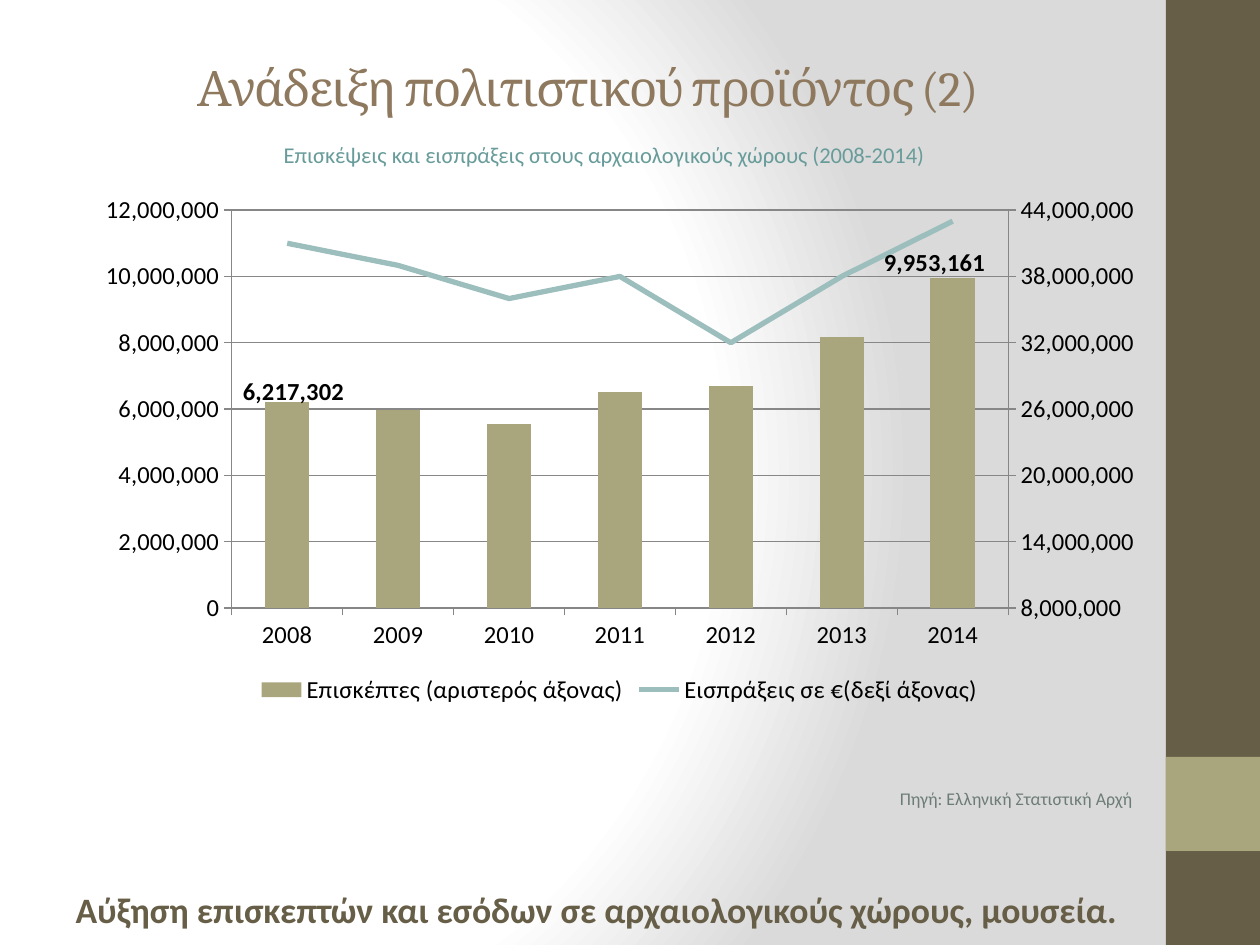
import copy
import pptx
import pptx.util
import pptx.chart.axis
import pptx.chart.data
import pptx.dml.color
import pptx.enum.chart
import pptx.enum.shapes
import pptx.enum.text
import pptx.oxml
import pptx.oxml.ns

PX = 914400 / 126
qn = pptx.oxml.ns.qn
ALIGN = pptx.enum.text.PP_ALIGN


class Theme:
    dark, olive, teal = "675E47", "A9A57C", "9CBEBD"
    title, lead, note = "8E795E", "689C9A", "6D7D76"
    black, grid, white, edge = "000000", "868686", "FFFFFF", "DADADA"
    serif, sans = "Cambria", "Calibri"
    title_pt, lead_pt, note_pt, main_pt, chart_pt = 28, 12.9, 10.2, 20.4, 14


def px(*nums):
    return [round(n * PX) for n in nums]


def rgb(code):
    return pptx.dml.color.RGBColor.from_string(code)


def style(font, face, size, color, bold=False):
    font.name, font.size, font.bold = face, pptx.util.Pt(size), bold
    font.color.rgb = rgb(color)


def place(shape, box):
    shape.left, shape.top, shape.width, shape.height = px(*box)


def add_xml(tag, parent, **attrs):
    node = parent.makeelement(qn(tag), {k: str(v) for k, v in attrs.items()})
    parent.append(node)
    return node


def layout(shares, inner=False):
    """Manual chart layout from shares of the chart's size."""
    node = pptx.oxml.parse_xml(
        '<c:layout xmlns:c="http://schemas.openxmlformats.org/drawingml/2006/chart"/>')
    man = add_xml("c:manualLayout", node)
    if inner:
        add_xml("c:layoutTarget", man, val="inner")
        for key in ("xMode", "yMode"):
            add_xml("c:" + key, man, val="edge")
    for key, share in zip("xywh", shares):
        add_xml("c:" + key, man, val=round(share, 3))
    return node


def backdrop(slide):
    # Round gradient, white at the left
    fill = slide.background.fill
    fill.gradient()
    grad = slide.background._cSld.find(".//" + qn("a:gradFill"))
    for child in list(grad):
        grad.remove(child)
    stops = add_xml("a:gsLst", grad)
    for pos, color in ((0, Theme.white), (75, Theme.white), (100, Theme.edge)):
        add_xml("a:srgbClr", add_xml("a:gs", stops, pos=pos * 1000), val=color)
    way = add_xml("a:path", grad, path="circle")
    add_xml("a:fillToRect", way, l=20000, t=50000, r=100000, b=50000)


def sidebar(slide, box):
    # Dark band with a lighter square
    x, y, w, h = box
    square = (x, y + h - 2 * w, w, w)
    for part, color in ((box, Theme.dark), (square, Theme.olive)):
        rect = slide.shapes.add_shape(
            pptx.enum.shapes.MSO_SHAPE.RECTANGLE, *px(*part))
        rect.shadow.inherit = False
        rect.fill.solid()
        rect.fill.fore_color.rgb = rgb(color)
        rect.line.fill.background()


def heading(slide, box):
    title = slide.shapes.title
    place(title, box)
    frame = title.text_frame
    frame.text = "Ανάδειξη πολιτιστικού προϊόντος (2)"
    frame.vertical_anchor = pptx.enum.text.MSO_ANCHOR.MIDDLE
    frame.auto_size = pptx.enum.text.MSO_AUTO_SIZE.NONE
    frame.paragraphs[0].alignment = ALIGN.CENTER
    run = frame.paragraphs[0].runs[0]
    style(run.font, Theme.serif, Theme.title_pt, Theme.title)
    run.font._element.set("spc", "-100")


def body(slide, box):
    # Chart caption, source note and main message, spaced around the chart
    holder = slide.placeholders[1]
    place(holder, box)
    frame = holder.text_frame
    frame.auto_size = pptx.enum.text.MSO_AUTO_SIZE.NONE
    rows = (
        ("Επισκέψεις και εισπράξεις στους αρχαιολογικούς χώρους (2008-2014)",
         ALIGN.CENTER, 0, Theme.lead_pt, Theme.lead, False),
        ("Πηγή: Ελληνική Στατιστική Αρχή",
         ALIGN.RIGHT, 354, Theme.note_pt, Theme.note, False),
        ("Αύξηση επισκεπτών και εσόδων σε αρχαιολογικούς χώρους, μουσεία.",
         ALIGN.LEFT, 45, Theme.main_pt, Theme.dark, True))
    frame.text = "\n".join(row[0] for row in rows)
    for para, (_, align, gap, size, color, bold) in zip(frame.paragraphs, rows):
        para.alignment, para.space_before = align, pptx.util.Pt(gap)
        props = para._p.get_or_add_pPr()
        props.set("marL", "0")
        props.set("indent", "0")
        add_xml("a:buNone", props)
        style(para.runs[0].font, Theme.sans, size, color, bold)


def split(chart):
    """Move the second series to a line plot on a right axis, and return it."""
    area = chart._chartSpace.chart.plotArea
    bar = area.find(qn("c:barChart"))
    line = area.makeelement(qn("c:lineChart"), {})
    bar.addnext(line)
    add_xml("c:grouping", line, val="standard")
    add_xml("c:varyColors", line, val=0)
    ser = bar.findall(qn("c:ser"))[1]
    for flag in ser.findall(qn("c:invertIfNegative")):
        ser.remove(flag)
    line.append(ser)
    add_xml("c:marker", line, val=1)
    cat, val = (copy.deepcopy(area.find(qn(t))) for t in ("c:catAx", "c:valAx"))
    for axis, own, other in ((cat, 5001, 5002), (val, 5002, 5001)):
        add_xml("c:axId", line, val=own)
        axis.find(qn("c:axId")).set("val", str(own))
        axis.find(qn("c:crossAx")).set("val", str(other))
    area.find(qn("c:valAx")).addnext(val)
    val.addnext(cat)
    cat.find(qn("c:delete")).set("val", "1")
    val.find(qn("c:axPos")).set("val", "r")
    val.find(qn("c:crosses")).set("val", "max")
    return pptx.chart.axis.ValueAxis(val)


def trim(axis, span=None):
    axis.format.line.color.rgb = rgb(Theme.grid)
    axis.major_tick_mark = pptx.enum.chart.XL_TICK_MARK.OUTSIDE
    style(axis.tick_labels.font, Theme.sans, Theme.chart_pt, Theme.black)
    if span:
        axis.minimum_scale, axis.maximum_scale, axis.major_unit = span
        axis.tick_labels.number_format = "#,##0"
        axis.tick_labels.number_format_is_linked = False


def graph(slide, box):
    data = pptx.chart.data.CategoryChartData(number_format="#,##0")
    data.categories = [str(year) for year in range(2008, 2015)]
    data.add_series("Επισκέπτες (αριστερός άξονας)",
                    (6217302, 5970999, 5547053, 6517645, 6693845, 8167889, 9953161))
    data.add_series("Εισπράξεις σε €(δεξί άξονας)",
                    [m * 1000000 for m in (41, 39, 36, 38, 32, 38, 43)])
    chart = slide.shapes.add_chart(
        pptx.enum.chart.XL_CHART_TYPE.COLUMN_CLUSTERED, *px(*box), data).chart
    chart.has_title = False
    style(chart.font, Theme.sans, Theme.chart_pt, Theme.black)

    # Axes
    right = split(chart)
    right.has_major_gridlines = False
    trim(chart.category_axis)
    trim(chart.value_axis, (0, 10500000, 2000000))
    trim(right, (8000000, 44000000, 6000000))
    chart.value_axis.major_gridlines.format.line.color.rgb = rgb(Theme.grid)

    # Columns, with the first and last labelled
    bars, lines = chart.plots
    bars.gap_width, bars.vary_by_categories = 150, False
    cols = bars.series[0]
    cols.format.fill.solid()
    cols.format.fill.fore_color.rgb = rgb(Theme.olive)
    for index, shift in ((0, (0.006, 0.02)), (6, (-0.017, 0.01))):
        label = cols.points[index].data_label
        style(label.font, Theme.sans, Theme.chart_pt, Theme.black, True)
        label.position = pptx.enum.chart.XL_LABEL_POSITION.OUTSIDE_END
        label._dLbl.find(qn("c:idx")).addnext(layout(shift))
    for flag in cols._element.findall(qn("c:dLbls") + "/" + qn("c:showVal")):
        flag.set("val", "0")

    # Line
    curve = lines.series[0]
    curve.smooth = False
    curve.format.line.color.rgb = rgb(Theme.teal)
    curve.format.line.width = pptx.util.Pt(3)
    curve.marker.style = pptx.enum.chart.XL_MARKER_STYLE.NONE

    # Legend and plot area
    chart.has_legend = True
    chart.legend.position = pptx.enum.chart.XL_LEGEND_POSITION.BOTTOM
    chart.legend.include_in_layout = False
    style(chart.legend.font, Theme.sans, Theme.chart_pt, Theme.black)
    area = chart._chartSpace.chart.plotArea
    for old in area.findall(qn("c:layout")):
        area.remove(old)
    w, h = box[2:]
    area.insert(0, layout((148 / w, 25 / h, 776 / w, 398 / h), inner=True))


def main():
    deck = pptx.Presentation()
    deck.slide_width, deck.slide_height = px(1260, 945)
    slide = deck.slides.add_slide(deck.slide_layouts[1])
    backdrop(slide)
    sidebar(slide, (1166, 0, 94, 945))
    heading(slide, (63, 38, 1050, 97))
    body(slide, (63, 135, 1082, 724))
    graph(slide, (84, 185, 1071, 525))
    deck.save("out.pptx")


if __name__ == "__main__":
    main()
